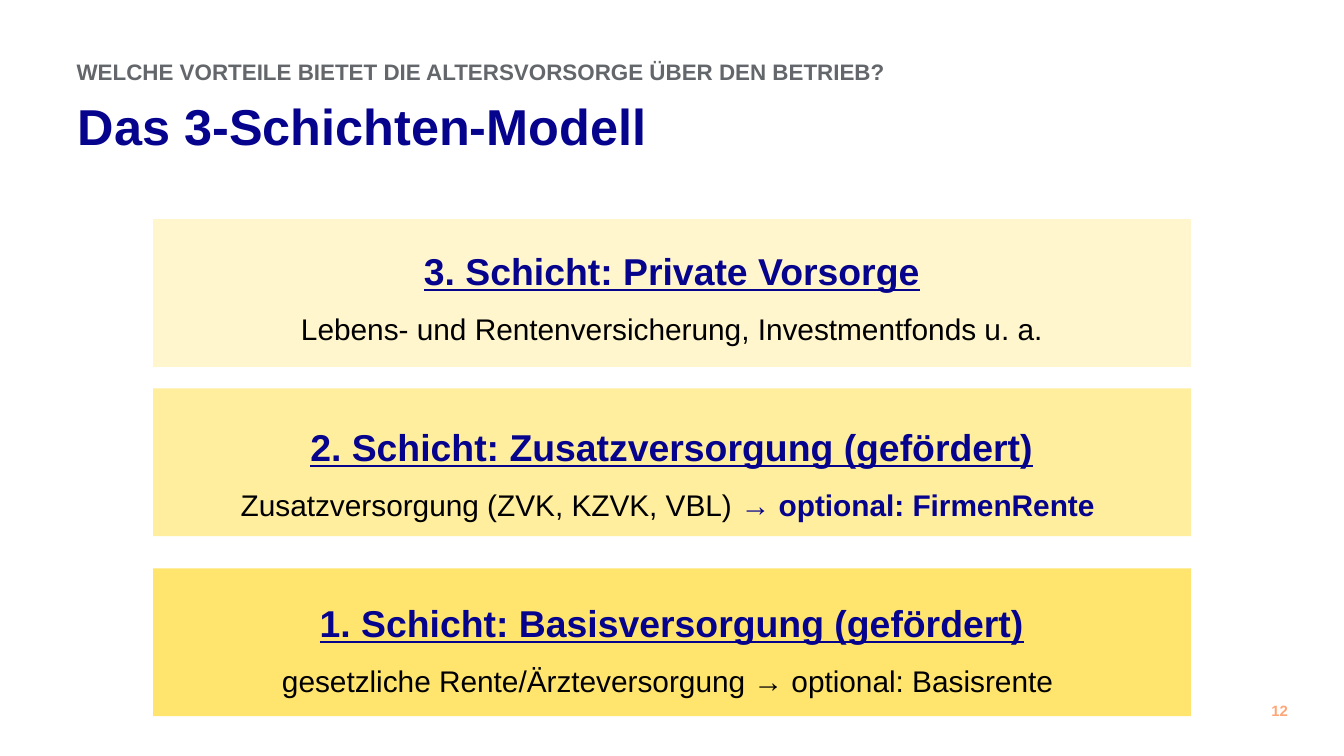
from lxml.etree import SubElement
from pptx import Presentation
from pptx.dml.color import RGBColor
from pptx.enum.shapes import MSO_SHAPE
from pptx.enum.text import MSO_ANCHOR, MSO_AUTO_SIZE, PP_ALIGN
from pptx.oxml.ns import qn
from pptx.util import Inches, Pt

THEME = {
    "face": "Arial",
    "head": {"size": 20, "color": "06038D", "bold": True, "underline": True},
    "text": {"size": 16, "color": "000000", "bold": False},
    "key": {"size": 16, "color": "06038D", "bold": True},
    "title": {"size": 27, "color": "06038D", "bold": True},
    "kicker": {"size": 12, "color": "63666A", "bold": True},
    "page": {"size": 8, "color": "FFA678", "bold": True},
}
WIDE = 10
HIGH = WIDE * 9 / 16
BAND = {"left": 1.14, "wide": 7.72, "high": 1.1}
GAP = 29.5

KICKER = "WELCHE VORTEILE BIETET DIE ALTERSVORSORGE ÜBER DEN BETRIEB?"
TITLE = "Das 3-Schichten-Modell"
PAGE = "12"
LAYERS = [
    (1.63, "FFF6CE", "3. Schicht: Private Vorsorge",
     [("Lebens- und Rentenversicherung, Investmentfonds u. a.", "text")]),
    (2.89, "FFEE9E", "2. Schicht: Zusatzversorgung (gefördert)",
     [("Zusatzversorgung (ZVK, KZVK, VBL) ", "text"),
      ("→ optional: FirmenRente ", "key")]),
    (4.23, "FFE56E", "1. Schicht: Basisversorgung (gefördert)",
     [("gesetzliche Rente/Ärzteversorgung → optional: Basisrente ", "text")]),
]


def put(item, values):
    for name, value in values.items():
        setattr(item, name, value)


def place(shape, left, top, wide, high):
    put(shape, {"left": Inches(left), "top": Inches(top),
                "width": Inches(wide), "height": Inches(high)})


def frame(shape, side, edge):
    put(shape.text_frame, {
        "word_wrap": True, "auto_size": MSO_AUTO_SIZE.NONE,
        "vertical_anchor": MSO_ANCHOR.TOP,
        "margin_left": Inches(side), "margin_right": Inches(side),
        "margin_top": Inches(edge), "margin_bottom": Inches(edge)})
    return shape.text_frame


def write(para, runs, form):
    put(para, form)
    for text, style in runs:
        run = para.add_run()
        run.text = text
        look = dict(THEME[style])
        run.font.color.rgb = RGBColor.from_string(look.pop("color"))
        put(run.font, {**look, "size": Pt(look["size"]), "name": THEME["face"]})


def plain(para):
    props = para._p.get_or_add_pPr()
    props.set("marL", "0")
    props.set("indent", "0")
    SubElement(props, qn("a:buNone"))


deck = Presentation()
put(deck, {"slide_width": Inches(WIDE), "slide_height": Inches(HIGH)})
slide = deck.slides.add_slide(deck.slide_layouts[1])
shapes = slide.shapes
title, body = shapes.title, slide.placeholders[1]

for top, fill, _, _ in LAYERS:
    band = shapes.add_shape(MSO_SHAPE.RECTANGLE, 0, 0, 0, 0)
    place(band, BAND["left"], top, BAND["wide"], BAND["high"])
    band.shadow.inherit = False
    band.fill.solid()
    band.fill.fore_color.rgb = RGBColor.from_string(fill)
    band.line.fill.background()

kicker = shapes.add_textbox(0, 0, 0, 0)
page = shapes.add_textbox(0, 0, 0, 0)
LABELS = [
    (kicker, KICKER, "kicker", (0.54, 0.41, 8.01, 0.39), (0.03, 0.02)),
    (title, TITLE, "title", (0.55, 0.69, 8.5, 0.78), (0.03, 0.02)),
    (page, PAGE, "page", (9.41, 5.17, 0.24, 0.24), (0.05, 0.05)),
]
for shape, text, style, spot, inset in LABELS:
    place(shape, *spot)
    write(frame(shape, *inset).paragraphs[0], [(text, style)],
          {"alignment": PP_ALIGN.LEFT})

place(body, 1.66, LAYERS[0][0], 6.68, 3.97)
shapes._spTree.append(body._element)
story = frame(body, 0.1, 0.05)
for row, (_, _, head, runs) in enumerate(LAYERS):
    lines = [([(head, "head")], GAP if row else 0), (runs, 0)]
    for step, (parts, gap) in enumerate(lines):
        para = story.add_paragraph() if row or step else story.paragraphs[0]
        plain(para)
        write(para, parts, {"alignment": PP_ALIGN.CENTER,
                            "line_spacing": 1.5, "space_before": Pt(gap)})

deck.save("out.pptx")
